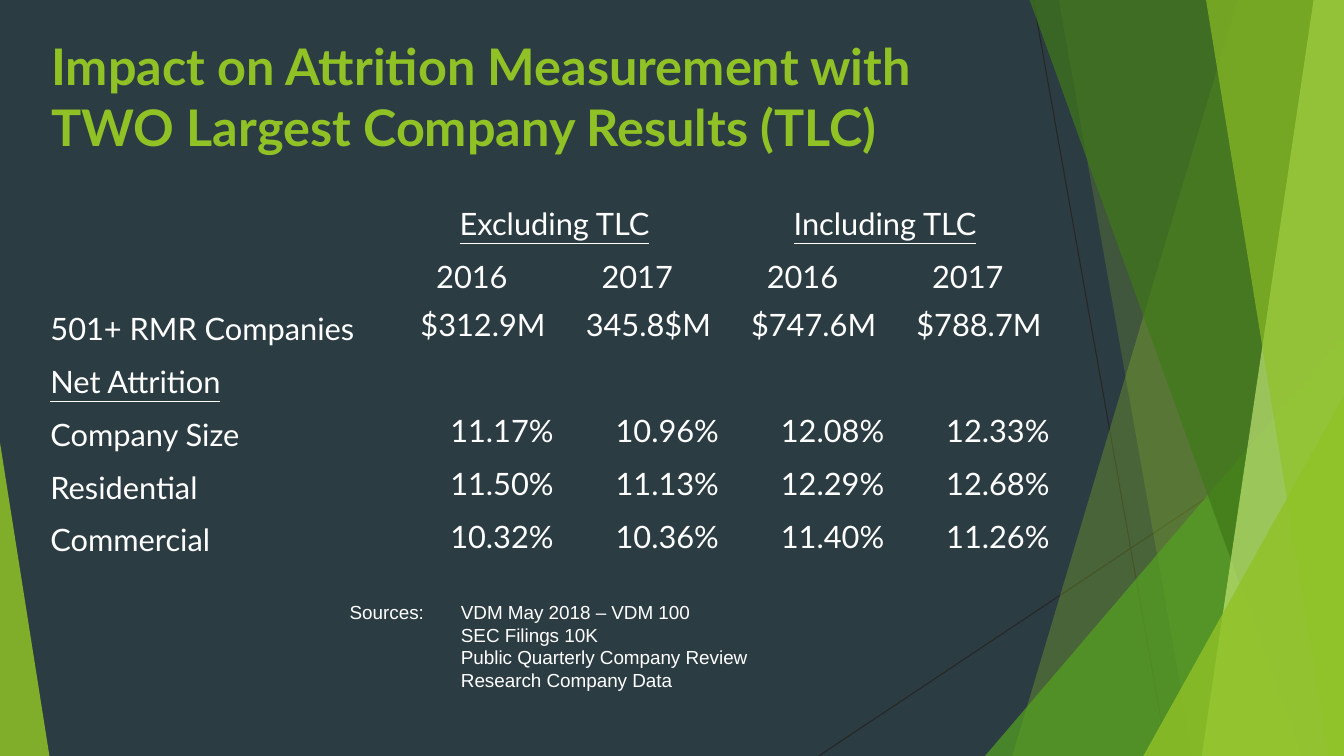
import pptx
import pptx.dml.color
import pptx.enum.dml
import pptx.enum.shapes
import pptx.enum.text
import pptx.oxml.ns
import pptx.util
from lxml import etree

ALIGN = pptx.enum.text.PP_ALIGN
ANCHOR = pptx.enum.text.MSO_ANCHOR
NO_GRID_STYLE = "{2D5ABB26-0587-4C30-8999-92F81FD0307C}"


def color(hex_string):
    return pptx.dml.color.RGBColor.from_string(hex_string)


def add_xml(parent, tag, **attributes):
    return etree.SubElement(parent, pptx.oxml.ns.qn(tag), attributes)


class Deck:
    """Slide and style; every x and y is a percentage of the slide's width or height."""

    BACKGROUND, GREEN, WHITE, HAIRLINE = "2C3C43", "90C226", "FFFFFF", "262626"
    HEADING_FONT, NOTE_FONT = "Lato", "Arial"

    def __init__(self):
        self.presentation = pptx.Presentation()
        self.presentation.slide_width = pptx.util.Inches(13.33)
        self.presentation.slide_height = pptx.util.Inches(7.5)
        self.slide = self.presentation.slides.add_slide(self.presentation.slide_layouts[6])
        self.slide.background.fill.solid()
        self.slide.background.fill.fore_color.rgb = color(self.BACKGROUND)

    def x(self, share):
        return round(self.presentation.slide_width * share / 100)

    def y(self, share):
        return round(self.presentation.slide_height * share / 100)

    def box(self, left, top, width, height):
        return self.x(left), self.y(top), self.x(width), self.y(height)

    def hairline(self, x1, y1, x2, y2):
        line = self.slide.shapes.add_connector(
            pptx.enum.shapes.MSO_CONNECTOR.STRAIGHT,
            self.x(x1), self.y(y1), self.x(x2), self.y(y2))
        line.line.color.rgb = color(self.HAIRLINE)
        line.line.width = pptx.util.Pt(0.75)
        add_xml(line._element.spPr, "a:effectLst")

    def paint(self, shape, fill, opacity):
        shape.shadow.inherit = False
        shape.line.fill.background()
        shape.fill.solid()
        shape.fill.fore_color.rgb = color(fill)
        tint = shape._element.spPr.find(".//" + pptx.oxml.ns.qn("a:srgbClr"))
        add_xml(tint, "a:alpha", val=str(opacity * 1000))

    def facet(self, top_x, bottom_x, fill, opacity):
        """Full-height panel from a slanted left edge to the slide's right edge."""
        top = self.y(-0.13)
        outline = self.slide.shapes.build_freeform(self.x(top_x), top)
        outline.add_line_segments([(self.x(100), top), (self.x(100), self.y(100)),
                                   (self.x(bottom_x), self.y(100))], close=True)
        self.paint(outline.convert_to_shape(), fill, opacity)

    def triangle(self, left, top, width, apex, fill, opacity):
        """Triangle standing on the slide's bottom edge."""
        shape = self.slide.shapes.add_shape(
            pptx.enum.shapes.MSO_SHAPE.ISOSCELES_TRIANGLE,
            *self.box(left, top, width, 100 - top))
        shape.adjustments[0] = apex
        self.paint(shape, fill, opacity)

    def style(self, paragraph, size, font, hex_color, bold=False, underline=False):
        for run in paragraph.runs:
            run.font.size = pptx.util.Pt(size)
            run.font.name = font
            run.font.color.rgb = color(hex_color)
            run.font.bold = bold
            run.font.underline = underline

    def text(self, place, lines, size, font, hex_color, bold=False):
        frame = self.slide.shapes.add_textbox(*self.box(*place)).text_frame
        frame.word_wrap = True
        frame.text = "\n".join(lines)
        for paragraph in frame.paragraphs:
            self.style(paragraph, size, font, hex_color, bold)
        return frame

    def table(self, left, top, widths, heights):
        table = self.slide.shapes.add_table(
            len(heights), len(widths),
            *self.box(left, top, sum(widths), sum(heights))).table
        table.first_row = table.horz_banding = False
        table._tbl.tblPr.find(pptx.oxml.ns.qn("a:tableStyleId")).text = NO_GRID_STYLE
        for column, width in zip(table.columns, widths):
            column.width = self.x(width)
        for row, height in zip(table.rows, heights):
            row.height = self.y(height)
        for cell in table.iter_cells():
            cell.fill.background()
        return table

    def cell(self, cell, content, align, underline=False, tight=False):
        """Figures are right-aligned and centred vertically; labels sit at the bottom."""
        is_figure = align == ALIGN.RIGHT
        cell.vertical_anchor = ANCHOR.MIDDLE if is_figure else ANCHOR.BOTTOM
        side, top, bottom = (0.01, 0.01, 0) if tight else (0.09, 0.04, 0.04)
        cell.margin_left = cell.margin_right = pptx.util.Inches(side)
        cell.margin_top = pptx.util.Inches(top)
        cell.margin_bottom = pptx.util.Inches(bottom)
        paragraph = cell.text_frame.paragraphs[0]
        paragraph.text = content
        paragraph.alignment = align
        if not is_figure:
            paragraph.space_before = pptx.util.Pt(4.4)
        self.style(paragraph, 22, self.HEADING_FONT, self.WHITE, underline=underline)


def draw_backdrop(deck):
    deck.hairline(76.89, 0, 86.87, 100)
    deck.hairline(100, 53.73, 60.92, 100)
    deck.facet(92.12, 75.32, deck.GREEN, 30)
    deck.facet(78.77, 88.75, deck.GREEN, 20)
    deck.triangle(73.29, 44.4, 26.71, 1, "54A021", 72)
    deck.facet(76.59, 96.85, "3F7819", 70)
    deck.facet(97.75, 89.42, "C0E474", 70)
    deck.facet(89.72, 98.87, deck.GREEN, 65)
    deck.triangle(85.07, 52.4, 14.93, 1, deck.GREEN, 80)
    deck.triangle(0, 58.53, 3.68, 0, deck.GREEN, 85)


def draw_attrition_table(deck):
    table = deck.table(3.08, 23.33, [25.88] + [12.3] * 4, [9.2] + [6.98] * 6)
    table.cell(0, 0).merge(table.cell(1, 0))
    for column, group in ((1, "Excluding TLC"), (3, "Including TLC")):
        table.cell(0, column).merge(table.cell(0, column + 1))
        deck.cell(table.cell(0, column), group, ALIGN.CENTER, underline=True)
    for column, year in enumerate(["2016", "2017"] * 2, 1):
        deck.cell(table.cell(1, column), year, ALIGN.CENTER)

    measures = [
        ("501+ RMR Companies", ["$312.9M", "345.8$M", "$747.6M", "$788.7M"]),
        ("Net Attrition", []),
        ("Company Size", ["11.17%", "10.96%", "12.08%", "12.33%"]),
        ("Residential", ["11.50%", "11.13%", "12.29%", "12.68%"]),
        ("Commercial", ["10.32%", "10.36%", "11.40%", "11.26%"]),
    ]
    for row, (label, figures) in enumerate(measures, 2):
        deck.cell(table.cell(row, 0), label, ALIGN.LEFT, underline=not figures)
        for column, figure in enumerate(figures, 1):
            deck.cell(table.cell(row, column), figure, ALIGN.RIGHT,
                      tight=figure.endswith("%"))


def draw_sources(deck):
    frame = deck.text((25.28, 78.8, 40.66, 13.47),
                      ["Sources:\tVDM May 2018 – VDM 100", "SEC Filings 10K",
                       "Public Quarterly Company Review", "Research Company Data"],
                      13.5, deck.NOTE_FONT, deck.WHITE)
    indent = deck.x(8.28)
    for number, paragraph in enumerate(frame.paragraphs):
        properties = paragraph._p.get_or_add_pPr()
        properties.set("marL", str(indent))
        properties.set("indent", str(0 if number else -indent))


def main():
    deck = Deck()
    draw_backdrop(deck)
    deck.text((3.08, 4, 93.32, 19.2),
              ["Impact on Attrition Measurement with \vTWO Largest Company Results (TLC)"],
              36, deck.HEADING_FONT, deck.GREEN, bold=True)
    draw_attrition_table(deck)
    draw_sources(deck)
    deck.presentation.save("out.pptx")


if __name__ == "__main__":
    main()
